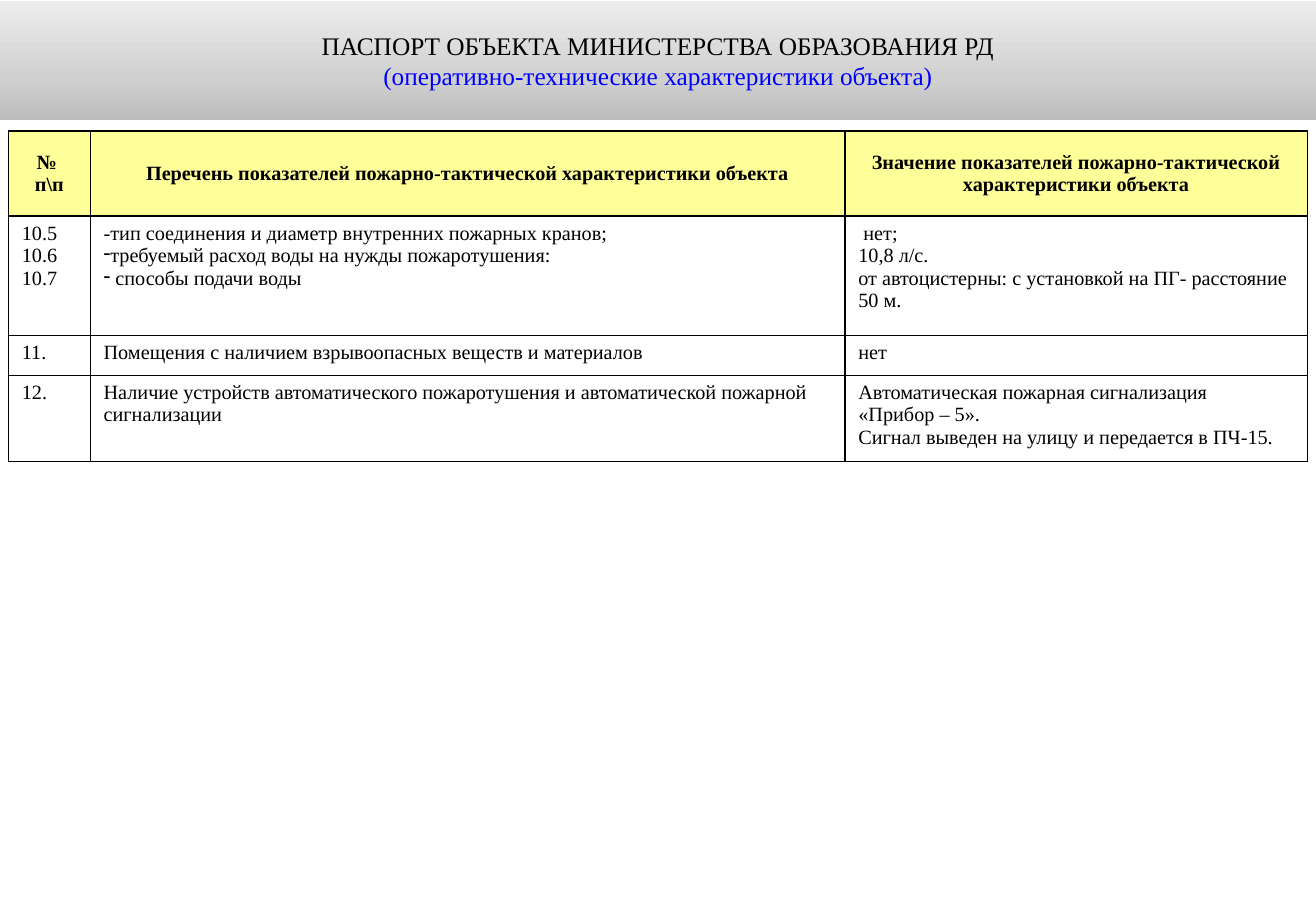
from copy import deepcopy

from pptx import Presentation
from pptx.dml.color import RGBColor
from pptx.enum.text import MSO_ANCHOR, MSO_AUTO_SIZE, PP_ALIGN
from pptx.oxml.ns import qn
from pptx.oxml.xmlchemy import OxmlElement
from pptx.util import Inches, Pt

CENTER, LEFT = PP_ALIGN.CENTER, PP_ALIGN.LEFT
MIDDLE, TOP = MSO_ANCHOR.MIDDLE, MSO_ANCHOR.TOP

TITLE = [
    ("ПАСПОРТ ОБЪЕКТА МИНИСТЕРСТВА ОБРАЗОВАНИЯ РД", "ink"),
    ("(оперативно-технические характеристики объекта)", "accent"),
]
# Each cell is a list of paragraphs; a (bullet, text) pair is a bulleted one.
ROWS = [
    [["№ ", "п\\п"],
     ["Перечень показателей пожарно-тактической характеристики объекта"],
     ["Значение показателей пожарно-тактической характеристики объекта"]],
    [["10.5", "10.6", "10.7"],
     ["-тип соединения и диаметр внутренних пожарных кранов;",
      ("-", "требуемый расход воды на нужды пожаротушения:"),
      ("-", " способы подачи воды")],
     [" нет;", "10,8 л/с.",
      "от автоцистерны: с установкой на ПГ- расстояние 50 м."]],
    [["11."],
     ["Помещения с наличием взрывоопасных веществ и материалов"],
     ["нет"]],
    [["12."],
     ["Наличие устройств автоматического пожаротушения и "
      "автоматической пожарной сигнализации"],
     ["Автоматическая пожарная сигнализация", "«Прибор – 5».",
      "Сигнал выведен на улицу и передается в ПЧ-15."]],
]

THEME = {
    "font": "Times New Roman", "title_size": 15, "cell_size": 12,
    "ink": "000000", "accent": "0000FF", "head": "FFFF99", "body": "FFFFFF",
    "band": [(0, "BCBCBC"), (0.35, "D0D0D0"), (1, "EDEDED")],
    "border": 1,
}

SLIDE_W, SLIDE_H = 10.83, 7.5
BAND_TOP, BAND_H = 0.01, 0.98
SIDE, TABLE_TOP = 0.07, 1.08
COL_SHARES = [0.063, 0.581, 0.356]
ROW_HEIGHTS = [0.7, 0.98, 0.33, 0.71]
CELL_MARGINS = {"margin_left": Inches(0.11), "margin_right": Inches(0.11),
                "margin_top": Inches(0.05), "margin_bottom": Inches(0.05)}


def apply(obj, values):
    for name, value in values.items():
        setattr(obj, name, value)


def add_text(p, text, size, color, align, bold=False):
    p.alignment = align
    r = p.add_run()
    r.text = text
    apply(r.font, {"name": THEME["font"], "size": Pt(size), "bold": bold})
    r.font.color.rgb = RGBColor.from_string(THEME[color])


def paragraphs(tf, count):
    return [tf.paragraphs[0]] + [tf.add_paragraph() for _ in range(count - 1)]


def set_bullet(p, char):
    pPr = p._p.get_or_add_pPr()
    pPr.set("marL", "0")
    pPr.set("indent", "0")
    bullet = OxmlElement("a:buChar")
    bullet.set("char", char)
    pPr.append(bullet)


def set_borders(cell):
    tcPr = cell._tc.get_or_add_tcPr()
    for i, side in enumerate(("a:lnL", "a:lnR", "a:lnT", "a:lnB")):
        ln = OxmlElement(side)
        ln.set("w", str(Pt(THEME["border"])))
        fill = OxmlElement("a:solidFill")
        color = OxmlElement("a:srgbClr")
        color.set("val", THEME["ink"])
        fill.append(color)
        ln.append(fill)
        tcPr.insert(i, ln)


def add_title(slide):
    s = slide.shapes.title
    apply(s, {"left": 0, "top": Inches(BAND_TOP),
              "width": Inches(SLIDE_W), "height": Inches(BAND_H)})
    s.fill.gradient()
    s.fill.gradient_angle = 90
    stops = s._element.spPr.find(".//" + qn("a:gsLst"))
    stops.append(deepcopy(stops[0]))
    for stop, (position, color) in zip(s.fill.gradient_stops, THEME["band"]):
        stop.position = position
        stop.color.rgb = RGBColor.from_string(color)
    tf = s.text_frame
    apply(tf, {"word_wrap": True, "auto_size": MSO_AUTO_SIZE.NONE,
               "vertical_anchor": MIDDLE})
    for p, (text, color) in zip(paragraphs(tf, len(TITLE)), TITLE):
        add_text(p, text, THEME["title_size"], color, CENTER)


def fill_cell(cell, items, is_head):
    apply(cell, CELL_MARGINS)
    cell.vertical_anchor = MIDDLE if is_head else TOP
    cell.fill.solid()
    cell.fill.fore_color.rgb = RGBColor.from_string(
        THEME["head" if is_head else "body"])
    set_borders(cell)
    for p, item in zip(paragraphs(cell.text_frame, len(items)), items):
        bullet, text = item if isinstance(item, tuple) else (None, item)
        add_text(p, text, THEME["cell_size"], "ink",
                 CENTER if is_head else LEFT, is_head)
        if bullet:
            set_bullet(p, bullet)


def add_passport_table(slide):
    width = SLIDE_W - 2 * SIDE
    table = slide.shapes.add_table(
        len(ROWS), len(COL_SHARES), Inches(SIDE), Inches(TABLE_TOP),
        Inches(width), Inches(sum(ROW_HEIGHTS))).table
    for column, share in zip(table.columns, COL_SHARES):
        column.width = Inches(width * share)
    for row, height in zip(table.rows, ROW_HEIGHTS):
        row.height = Inches(height)
    for i, cells in enumerate(ROWS):
        for j, items in enumerate(cells):
            fill_cell(table.cell(i, j), items, i == 0)


def main():
    prs = Presentation()
    apply(prs, {"slide_width": Inches(SLIDE_W),
                "slide_height": Inches(SLIDE_H)})
    slide = prs.slides.add_slide(prs.slide_layouts.get_by_name("Title Only"))
    add_title(slide)
    add_passport_table(slide)
    prs.save("out.pptx")


if __name__ == "__main__":
    main()
